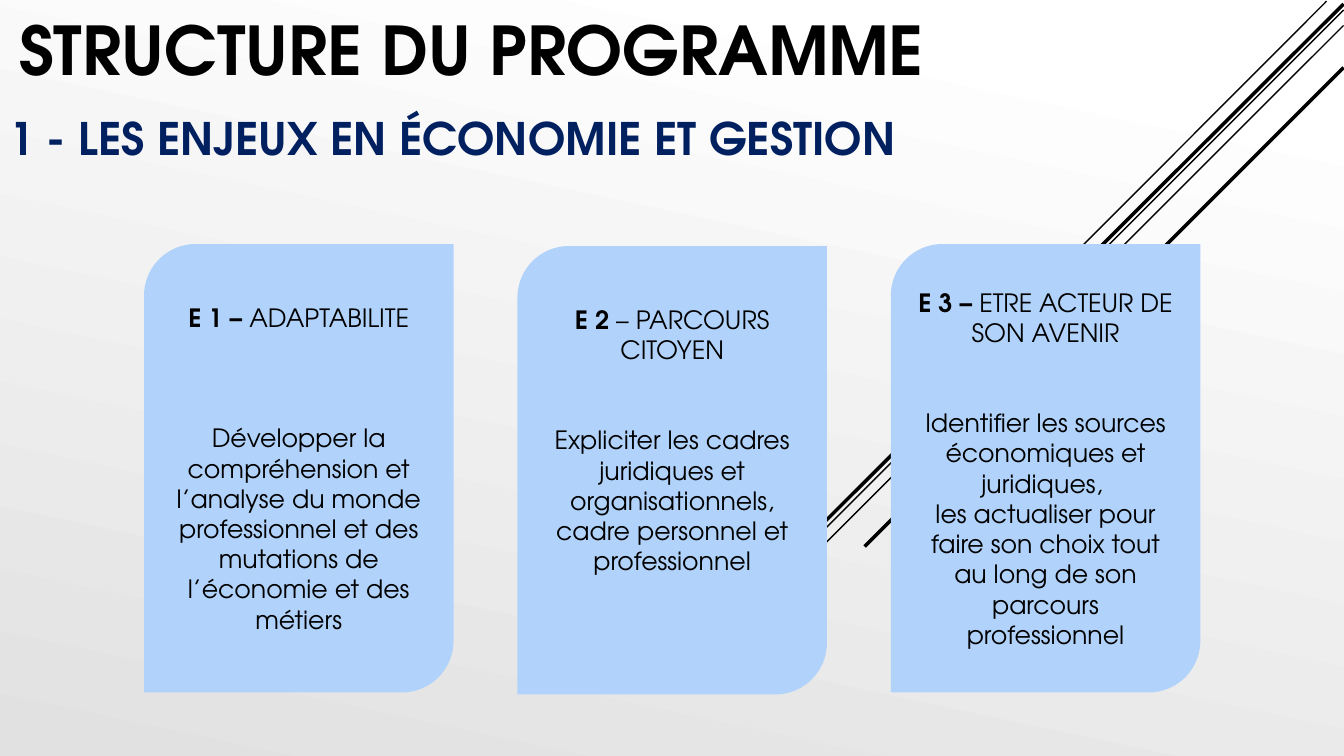
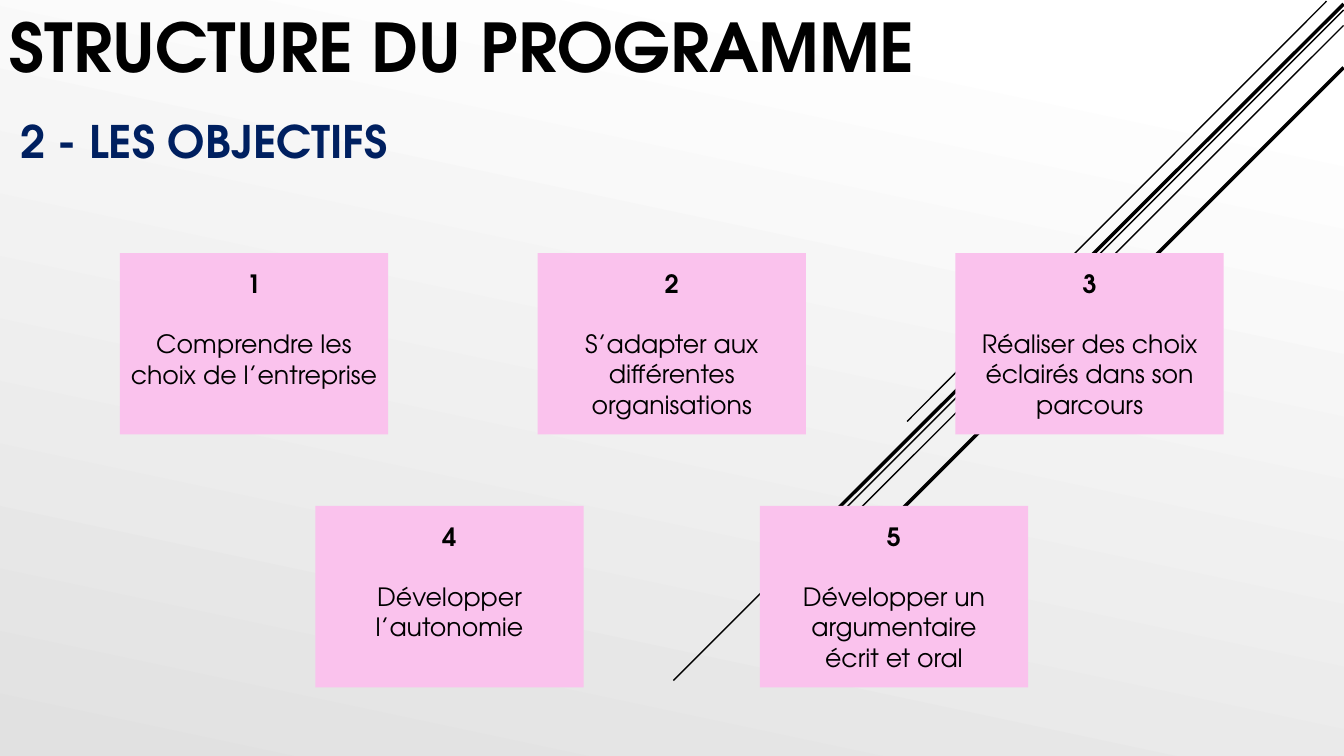
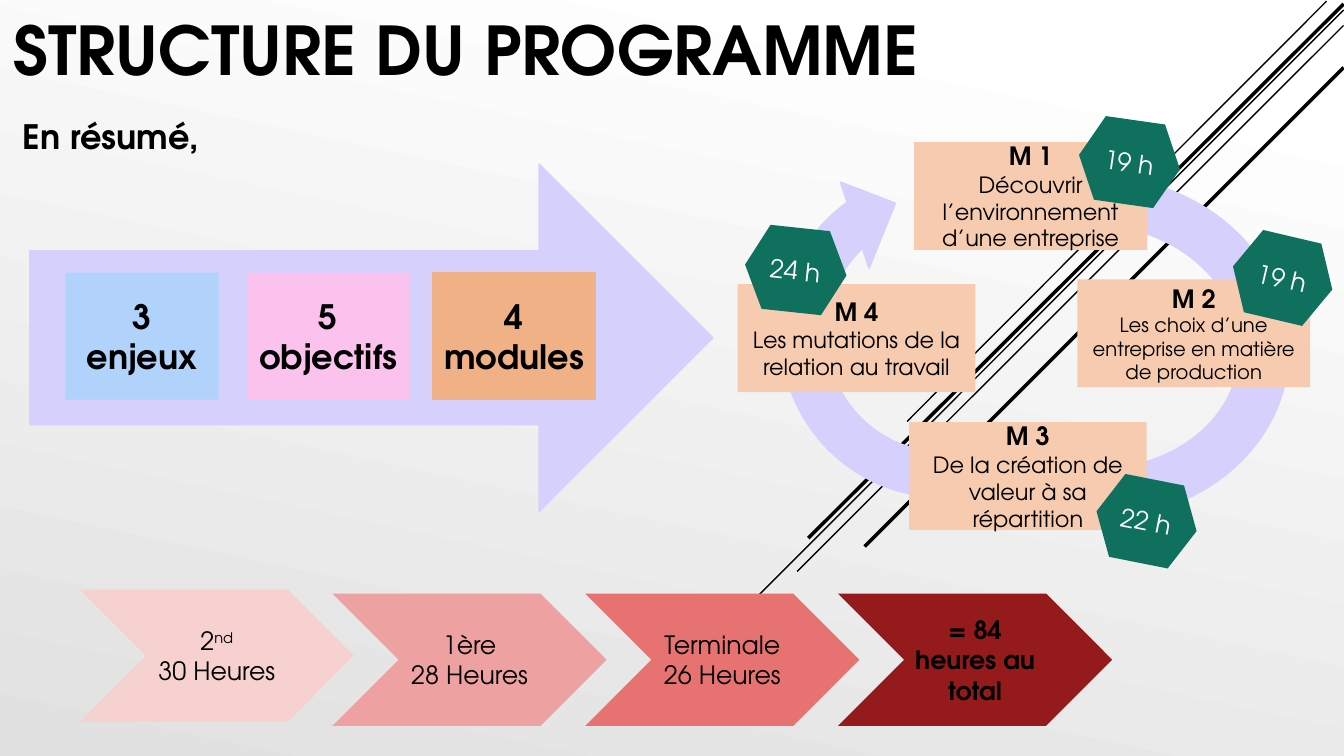
from lxml import etree
from pptx import Presentation
from pptx.dml.color import RGBColor
from pptx.enum.shapes import MSO_CONNECTOR, MSO_SHAPE
from pptx.enum.text import MSO_ANCHOR, MSO_AUTO_SIZE, PP_ALIGN
from pptx.oxml.ns import qn
from pptx.util import Cm, Pt

STRAIGHT = MSO_CONNECTOR.STRAIGHT
RECTANGLE = MSO_SHAPE.RECTANGLE
CARD = MSO_SHAPE.ROUND_2_DIAG_RECTANGLE
CHEVRON = MSO_SHAPE.CHEVRON
HEXAGON = MSO_SHAPE.HEXAGON
RIGHT_ARROW = MSO_SHAPE.RIGHT_ARROW
CIRCULAR_ARROW = MSO_SHAPE.CIRCULAR_ARROW
LEFT, CENTER = PP_ALIGN.LEFT, PP_ALIGN.CENTER
TOP, MIDDLE, BOTTOM = MSO_ANCHOR.TOP, MSO_ANCHOR.MIDDLE, MSO_ANCHOR.BOTTOM
NO_FIT = MSO_AUTO_SIZE.NONE

FONT = "TeX Gyre Adventor"
BLACK, WHITE, NAVY = "000000", "FFFFFF", "002060"
BLUE, PINK, ORANGE, PEACH = "B1D3FB", "FAC2ED", "F1B187", "F6CBAF"
LILAC, GREEN = "D5D0FC", "0F705D"
PROGRAMME = "STRUCTURE DU PROGRAMME"
TEXT_LINE = 21.5
LINE_CM = 0.76
INSET = 0.13

STRIPES = [
    (33.43, 0.03, 22.86, 10.62, 1),
    (33.86, 0.25, 16.97, 17.15, 1),
    (33.86, 0.64, 20.09, 14.4, 1),
    (33.86, 0.1, 20.37, 13.56, 2.5),
    (33.86, 1.7, 21.79, 13.77, 2.5),
]


def color(value):
    return RGBColor.from_string(value)


def lengths(box):
    return [Cm(value) for value in box]


def write(frame, paras, ink=BLACK, align=CENTER, anchor=MIDDLE):
    """Each para is (lines of gap above, [(text, size, bold), ...])."""
    frame.word_wrap = True
    frame.auto_size = NO_FIT
    frame.vertical_anchor = anchor
    for index, (gap, spans) in enumerate(paras):
        para = frame.add_paragraph() if index else frame.paragraphs[0]
        para.alignment = align
        para.space_before = Pt(gap * TEXT_LINE)
        for text, size, bold in spans:
            span = para.add_run()
            span.text = text
            span.font.name = FONT
            span.font.size = Pt(size)
            span.font.bold = bold
            span.font.color.rgb = color(ink)


def add_block(page, kind, box, fill, paras=(), ink=BLACK, outline=None, turn=0):
    shape = page.shapes.add_shape(kind, *lengths(box))
    shape.shadow.inherit = False
    shape.rotation = turn
    shape.fill.solid()
    shape.fill.fore_color.rgb = color(fill)
    if outline:
        shape.line.color.rgb = color(outline)
        shape.line.width = Pt(1.25)
    else:
        shape.line.fill.background()
    write(shape.text_frame, paras, ink)
    return shape


def add_title(page, box, text, size, ink, align):
    title = page.shapes.title
    title.left, title.top, title.width, title.height = lengths(box)
    write(title.text_frame, [(0, [(text, size, True)])], ink, align, BOTTOM)


def add_label(page, box, text, size, anchor):
    label = page.shapes.add_textbox(*lengths(box))
    write(label.text_frame, [(0, [(text, size, True)])], BLACK, LEFT, anchor)


def style_layout(deck, layout, page):
    fill = deck.slide_master.background.fill
    fill.gradient()
    fill.gradient_angle = 258
    for stop, position, shade in zip(fill.gradient_stops, (0.1, 1), (WHITE, "E1E1E1")):
        stop.position = position
        stop.color.rgb = color(shade)
    for index, (*ends, width) in enumerate(STRIPES):
        stripe = page.shapes.add_connector(STRAIGHT, *lengths(ends))
        stripe.line.color.rgb = color(BLACK)
        stripe.line.width = Pt(width)
        etree.SubElement(stripe.element.spPr, qn("a:effectLst"))
        stripe.element.nvCxnSpPr.cNvPr.id = 100 + index
        layout.shapes.element.append(stripe.element)


def add_cards(page, left, top):
    cards = [
        ("E 1 – ", "ADAPTABILITE", 3, 0, 0,
         ["Développer la compréhension et l’analyse du monde professionnel "
          "et des mutations de l’économie et des métiers"]),
        ("E 2 ", "– PARCOURS CITOYEN", 2, 2, 0.05,
         ["Expliciter les cadres juridiques et organisationnels, "
          "cadre personnel et professionnel"]),
        ("E 3 – ", "ETRE ACTEUR DE SON AVENIR", 2, 0, 0,
         ["Identifier les sources économiques et juridiques, ",
          "les actualiser pour faire son choix tout au long de son "
          "parcours professionnel"]),
    ]
    for index, (code, name, gap, below, drop, texts) in enumerate(cards):
        paras = [(0, [(code, 18, True), (name, 18, False)])]
        paras += [(0 if row else gap, [(text, 18, False)])
                  for row, text in enumerate(texts)]
        box = (left + index * 9.41, top + drop, 7.8, 11.3)
        card = add_block(page, CARD, box, BLUE, paras)
        card.text_frame.margin_bottom = Cm(INSET + below * LINE_CM)


def add_goals(page, left, top, pitch, first, goals):
    for index, (below, texts) in enumerate(goals):
        paras = [(0, [(str(first + index), 18, True)])]
        paras += [(0 if row else 1, [(text, 18, False)])
                  for row, text in enumerate(texts)]
        box = (left + index * pitch, top, 6.76, 4.57)
        goal = add_block(page, RECTANGLE, box, PINK, paras)
        goal.text_frame.margin_bottom = Cm(INSET + below * LINE_CM)


def add_summary_arrow(page, left, top):
    add_block(page, RIGHT_ARROW, (left, top, 17.2, 8.74), LILAC, outline=LILAC)
    tiles = [
        ("3 enjeux", 0.89, 3.86, BLUE, None),
        ("5 objectifs", 5.46, 4.11, PINK, None),
        ("4 modules", 10.14, 4.11, ORANGE, ORANGE),
    ]
    for text, across, width, fill, outline in tiles:
        box = (left + across, top + 2.73, width, 3.2)
        add_block(page, RECTANGLE, box, fill, [(0, [(text, 24, True)])], outline=outline)


def add_module_cycle(page, left, top):
    arrows = [(0.43, 0.87, 9.3, 9.12, 251.6), (4.04, 0.18, 9.86, 11.07, 93.9)]
    modules = [
        ("Découvrir l’environnement d’une entreprise", 16, 4.45, 0.56, 5.87),
        ("Les choix d’une entreprise en matière de production", 14, 8.56, 4.02, 5.87),
        ("De la création de valeur à sa répartition", 16, 4.32, 7.62, 5.99),
        ("Les mutations de la relation au travail", 16, 0, 4.14, 5.99),
    ]
    hours = [
        ("19 h", 8.59, 0, 8.1),
        ("19 h", 12.45, 2.92, 13.2),
        ("22 h", 9.02, 9.05, 11.2),
        ("24 h", 0.18, 2.72, 6.1),
    ]
    for across, down, width, height, turn in arrows:
        box = (left + across, top + down, width, height)
        add_block(page, CIRCULAR_ARROW, box, LILAC, outline=LILAC, turn=turn)
    for number, (text, size, across, down, width) in enumerate(modules, 1):
        paras = [(0, [(f"M {number}", 18, True)]), (0, [(text, size, False)])]
        box = (left + across, top + down, width, 2.72)
        add_block(page, RECTANGLE, box, PEACH, paras)
    for text, across, down, turn in hours:
        box = (left + across, top + down, 2.57, 2.13)
        add_block(page, HEXAGON, box, GREEN, [(0, [(text, 18, False)])], WHITE, turn=turn)


def add_year_chevrons(page, left, top):
    years = [
        ("F7D0D0", -0.1, False, [["2", "nd"], ["30 Heures"]]),
        ("EEA1A1", 0, False, [["1ère"], ["28 Heures"]]),
        ("E67272", 0, False, [["Terminale"], ["26 Heures"]]),
        ("941A1B", 0, True, [["= 84 heures au total"]]),
    ]
    for index, (fill, shift, bold, rows) in enumerate(years):
        paras = [(0, [(text, 18, bold) for text in row]) for row in rows]
        box = (left + index * 6.37, top + shift, 6.91, 3.33)
        chevron = add_block(page, CHEVRON, box, fill, paras)
        for ordinal in chevron.text_frame.paragraphs[0].runs[1:]:
            ordinal.font._element.set("baseline", "30000")


def build_issues(page):
    add_title(page, (-0.74, 2.36, 24.31, 1.91),
              "1 - LES ENJEUX EN ÉCONOMIE ET GESTION", 32, NAVY, CENTER)
    add_label(page, (0.23, 0, 23.5, 2.36), PROGRAMME, 48, BOTTOM)
    add_cards(page, 3.63, 6.15)


def build_goals(page):
    add_title(page, (-1.14, 2.77, 12.88, 1.57), "2 - LES OBJECTIFS ", 32, NAVY, CENTER)
    add_label(page, (0, -0.08, 24.31, 2.36), PROGRAMME, 48, BOTTOM)
    add_goals(page, 3.02, 6.38, 10.53, 1, [
        (1, ["Comprendre les choix de l’entreprise"]),
        (0, ["S’adapter aux différentes organisations"]),
        (0, ["Réaliser des choix éclairés dans son parcours"]),
    ])
    add_goals(page, 7.95, 12.75, 11.2, 4, [
        (1, ["Développer l’autonomie"]),
        (0, ["Développer un argumentaire", "écrit et oral"]),
    ])


def build_summary(page):
    add_title(page, (0.08, -0.1, 24.41, 2.46), PROGRAMME, 48, BLACK, LEFT)
    add_label(page, (0.33, 2.79, 10.39, 1.27), "En résumé,", 24, TOP)
    add_summary_arrow(page, 0.76, 4.14)
    add_module_cycle(page, 18.59, 3.02)
    add_year_chevrons(page, 2.01, 14.96)


def main():
    deck = Presentation()
    deck.slide_width, deck.slide_height = Cm(33.87), Cm(19.05)
    layout = deck.slide_layouts[5]
    builders = (build_issues, build_goals, build_summary)
    pages = [deck.slides.add_slide(layout) for _ in builders]
    style_layout(deck, layout, pages[0])
    for build, page in zip(builders, pages):
        build(page)
    deck.save("out.pptx")


if __name__ == "__main__":
    main()
